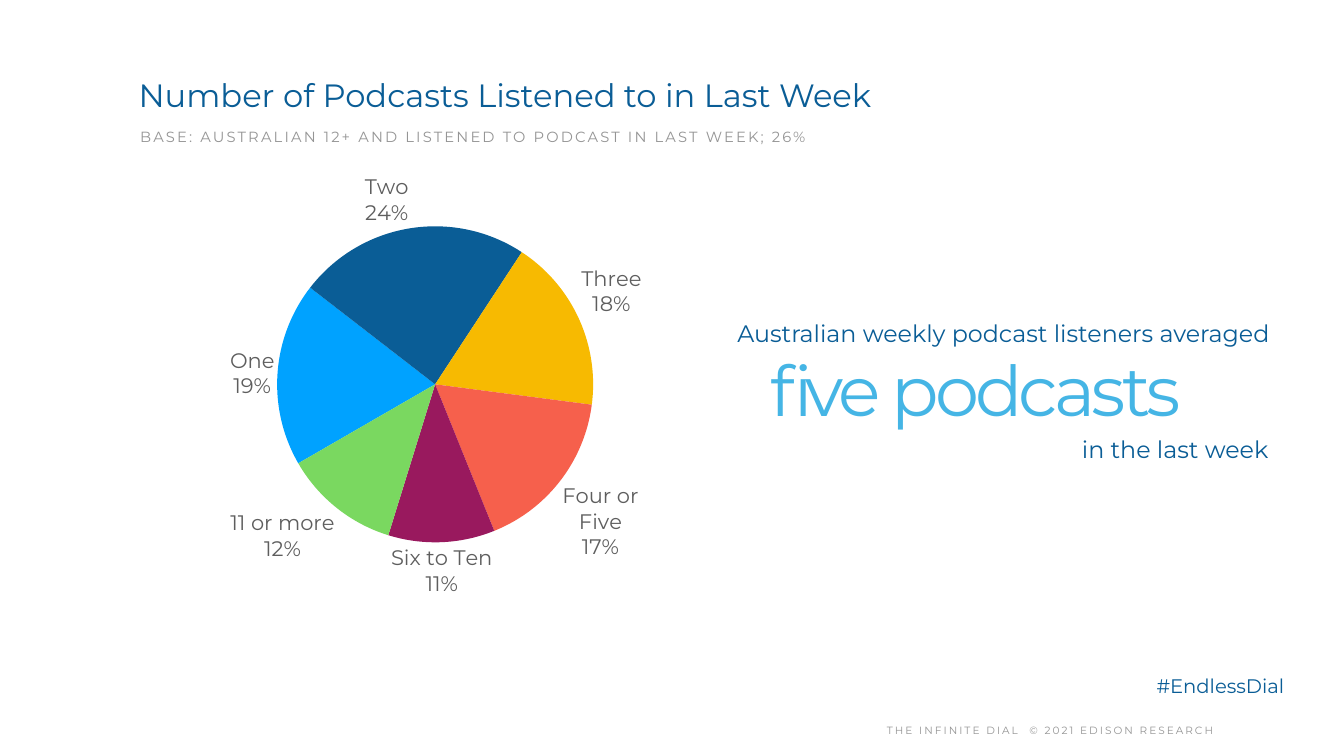
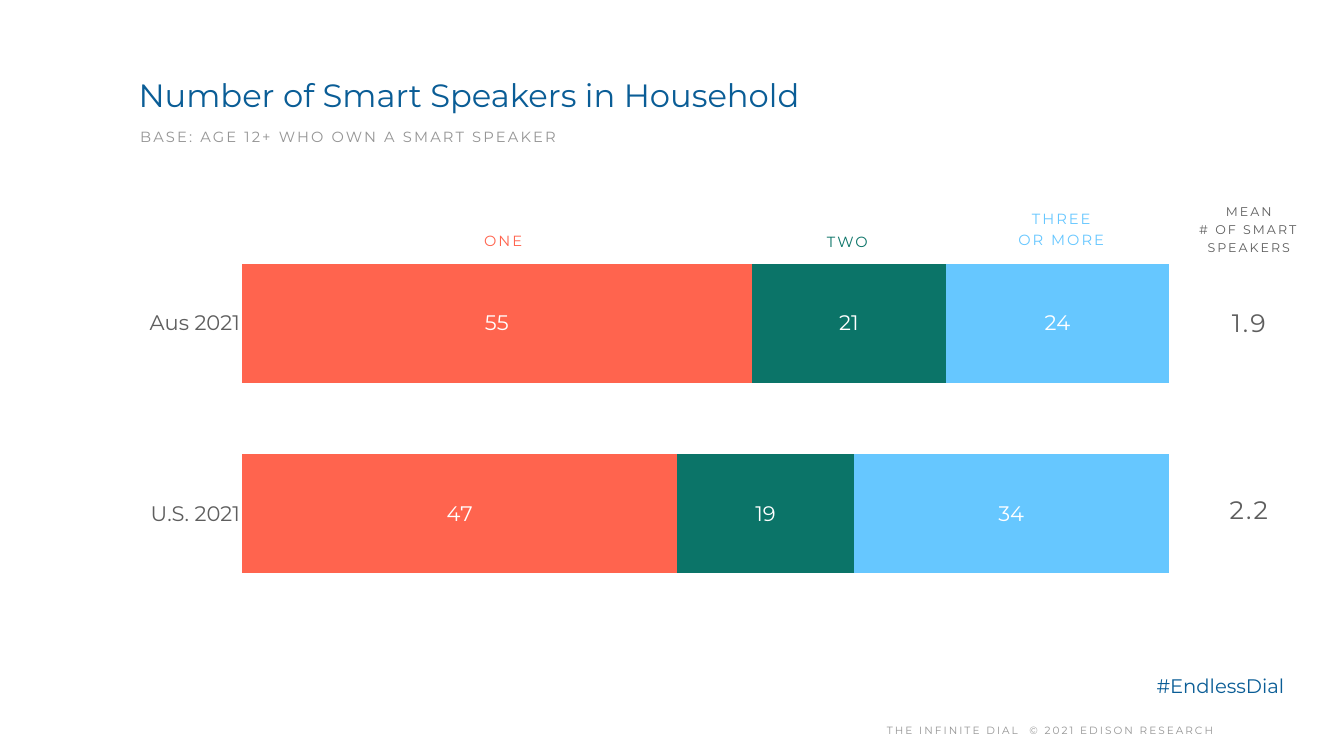
"""Build two survey slides with native charts."""
from lxml import etree
from pptx import Presentation
from pptx.chart.data import CategoryChartData as Data
from pptx.dml.color import RGBColor
from pptx.enum.chart import XL_CHART_TYPE as Kind
from pptx.enum.chart import XL_LABEL_POSITION as Spot
from pptx.enum.chart import XL_TICK_MARK as Tick
from pptx.enum.text import MSO_ANCHOR as Anchor
from pptx.enum.text import MSO_AUTO_SIZE as Fit
from pptx.enum.text import PP_ALIGN as Align
from pptx.oxml.ns import qn
from pptx.util import Inches, Pt

FONT = "Montserrat"
NAVY = RGBColor(0x0A, 0x5D, 0x96)
GRAY = RGBColor(0x95, 0x95, 0x95)
DARK = RGBColor(0x5E, 0x5E, 0x5E)
WHITE = RGBColor(0xFF, 0xFF, 0xFF)
AQUA = RGBColor(0x45, 0xB5, 0xE5)
BLUE = RGBColor(0x00, 0xA2, 0xFF)
GOLD = RGBColor(0xF7, 0xBA, 0x01)
RED = RGBColor(0xF6, 0x60, 0x4C)
PLUM = RGBColor(0x99, 0x19, 0x5E)
GREEN = RGBColor(0x7A, 0xD8, 0x60)
CORAL = RGBColor(0xFF, 0x64, 0x4E)
TEAL = RGBColor(0x0B, 0x74, 0x68)
SKY = RGBColor(0x66, 0xC7, 0xFF)


def style(font, size, color):
    font.name, font.size, font.color.rgb = FONT, Pt(size), color


def write(shape, text, size=21, color=GRAY, align=Align.LEFT, anchor=Anchor.TOP,
          line=1.0, space=0, wrap=True):
    frame = shape.text_frame
    frame.word_wrap = wrap
    frame.auto_size = Fit.NONE
    frame.vertical_anchor = anchor
    frame.margin_left = frame.margin_right = Inches(0.08)
    frame.margin_top = frame.margin_bottom = Inches(0.08)
    for i, words in enumerate(text.split("\n")):
        para = frame.add_paragraph() if i else frame.paragraphs[0]
        para.alignment, para.line_spacing = align, line
        run = para.add_run()
        run.text = words
        style(run.font, size, color)
        if space:
            run.font._element.set("spc", str(round(space * 100)))


class Deck:
    def __init__(self):
        self.show = Presentation()
        self.show.slide_width, self.show.slide_height = Inches(26.67), Inches(15)
        self.slide = None

    def page(self, title, base):
        self.slide = self.show.slides.add_slide(self.show.slide_layouts[5])
        head = self.slide.shapes.title
        head.left, head.top = Inches(2.67), Inches(1.41)
        head.width, head.height = Inches(21.69), Inches(1.23)
        write(head, title, size=46, color=NAVY)
        self.text((2.7, 2.38, 22.55, 0.58), base, anchor=Anchor.MIDDLE, line=1.2, space=3.1)
        self.label((14.95, 14.21, 11.78, 0.53), "THE INFINITE DIAL  © 2021 EDISON RESEARCH",
                   size=15)
        self.text((22.87, 13.25, 3.29, 0.68), "#EndlessDial", size=28, color=NAVY, line=1.1)

    def text(self, box, words, **look):
        write(self.slide.shapes.add_textbox(*map(Inches, box)), words, **look)

    def label(self, box, words, **look):
        self.text(box, words, align=Align.CENTER, anchor=Anchor.MIDDLE,
                  line=1.2, space=2.9, **look)

    def chart(self, kind, box, plot, names, rows):
        data = Data()
        data.categories = names
        for i, row in enumerate(rows, 1):
            data.add_series(f"Series {i}", row)
        chart = self.slide.shapes.add_chart(kind, *map(Inches, box), data).chart
        chart.has_legend = chart.has_title = False
        style(chart.font, 10, GRAY)
        area = chart._chartSpace.chart.plotArea
        for old in area.findall(qn("c:layout")):
            area.remove(old)
        layout = etree.Element(qn("c:layout"))
        area.insert(0, layout)
        hand = etree.SubElement(layout, qn("c:manualLayout"))
        parts = ("layoutTarget", "xMode", "yMode", "x", "y", "w", "h")
        for tag, val in zip(parts, ("inner", "edge", "edge", *plot)):
            etree.SubElement(hand, qn(f"c:{tag}")).set("val", str(val))
        return chart

    def pie(self, box, layout, names, row, hues, start):
        chart = self.chart(Kind.PIE, box, layout, names, [row])
        plot = chart.plots[0]
        plot.vary_by_categories = True
        for i, hue in enumerate(hues):
            fill = plot.series[0].points[i].format.fill
            fill.solid()
            fill.fore_color.rgb = hue
        plot.has_data_labels = True
        marks = plot.data_labels
        marks.show_value = False
        marks.show_percentage = marks.show_category_name = True
        marks.number_format, marks.number_format_is_linked = "#,##0%", False
        marks.position = Spot.OUTSIDE_END
        style(marks.font, 30, DARK)
        mark = etree.Element(qn("c:separator"))
        mark.text = "\n"
        marks._element.find(qn("c:showBubbleSize")).addnext(mark)
        pie = plot._element
        turn = pie.find(qn("c:firstSliceAng"))
        if turn is None:
            turn = etree.SubElement(pie, qn("c:firstSliceAng"))
        turn.set("val", str(start))

    def bars(self, box, layout, names, rows, hues):
        chart = self.chart(Kind.BAR_STACKED, box, layout, names, rows)
        plot = chart.plots[0]
        plot.gap_width, plot.overlap = 60, 100
        plot.vary_by_categories = False
        for one, hue in zip(plot.series, hues):
            one.format.fill.solid()
            one.format.fill.fore_color.rgb = hue
            marks = one.data_labels
            marks.show_value = True
            marks.position = Spot.CENTER
            style(marks.font, 30, WHITE)
        side, scale = chart.category_axis, chart.value_axis
        side.reverse_order = True
        side.major_tick_mark = side.minor_tick_mark = Tick.NONE
        side.format.line.fill.background()
        style(side.tick_labels.font, 30, DARK)
        scale.minimum_scale, scale.maximum_scale, scale.major_unit = 0, 100, 20
        scale.has_major_gridlines = scale.visible = False


def main():
    deck = Deck()

    deck.page("Number of Podcasts Listened to in Last Week",
              "BASE: AUSTRALIAN 12+ AND LISTENED TO PODCAST IN LAST WEEK; 26%")
    deck.pie((2.72, 2.03, 11.83, 11.34), (0.217, 0.217, 0.566, 0.553),
             ("One", "Two", "Three", "Four or Five", "Six to Ten", "11 or more"),
             (19, 24, 18, 17, 11, 12), (BLUE, NAVY, GOLD, RED, PLUM, GREEN), 240)
    deck.text((14.55, 6.24, 11.58, 1.23), "Australian weekly podcast listeners averaged",
              size=34, color=NAVY)
    deck.text((15.12, 6.78, 8.49, 1.84), "five podcasts", size=100, color=AQUA,
              align=Align.CENTER, anchor=Anchor.MIDDLE, space=-5.5, wrap=False)
    deck.text((16.99, 8.54, 8.26, 1.23), "in the last week", size=34, color=NAVY,
              align=Align.RIGHT)

    deck.page("Number of Smart Speakers in Household", "BASE: AGE 12+ WHO OWN A SMART SPEAKER")
    deck.bars((2.18, 3.63, 21.31, 8.74), (0.123, 0.103, 0.863, 0.863),
              ("Aus 2021", "U.S. 2021"), ((55, 47), (21, 19), (24, 34)), (CORAL, TEAL, SKY))
    deck.label((8.99, 4.46, 1.99, 0.55), "ONE", color=CORAL)
    deck.label((15.15, 4.49, 3.33, 0.55), "TWO", color=TEAL)
    deck.label((19.88, 4.01, 2.36, 1.01), "THREE\nOR MORE", color=SKY)
    for top, high, words, size in ((3.9, 1.25, "MEAN\n# OF SMART SPEAKERS", 18),
                                   (5.93, 0.83, "1.9", 36), (9.64, 0.83, "2.2", 36)):
        deck.label((23.49, top, 2.58, high), words, size=size, color=DARK)

    deck.show.save("out.pptx")


if __name__ == "__main__":
    main()
